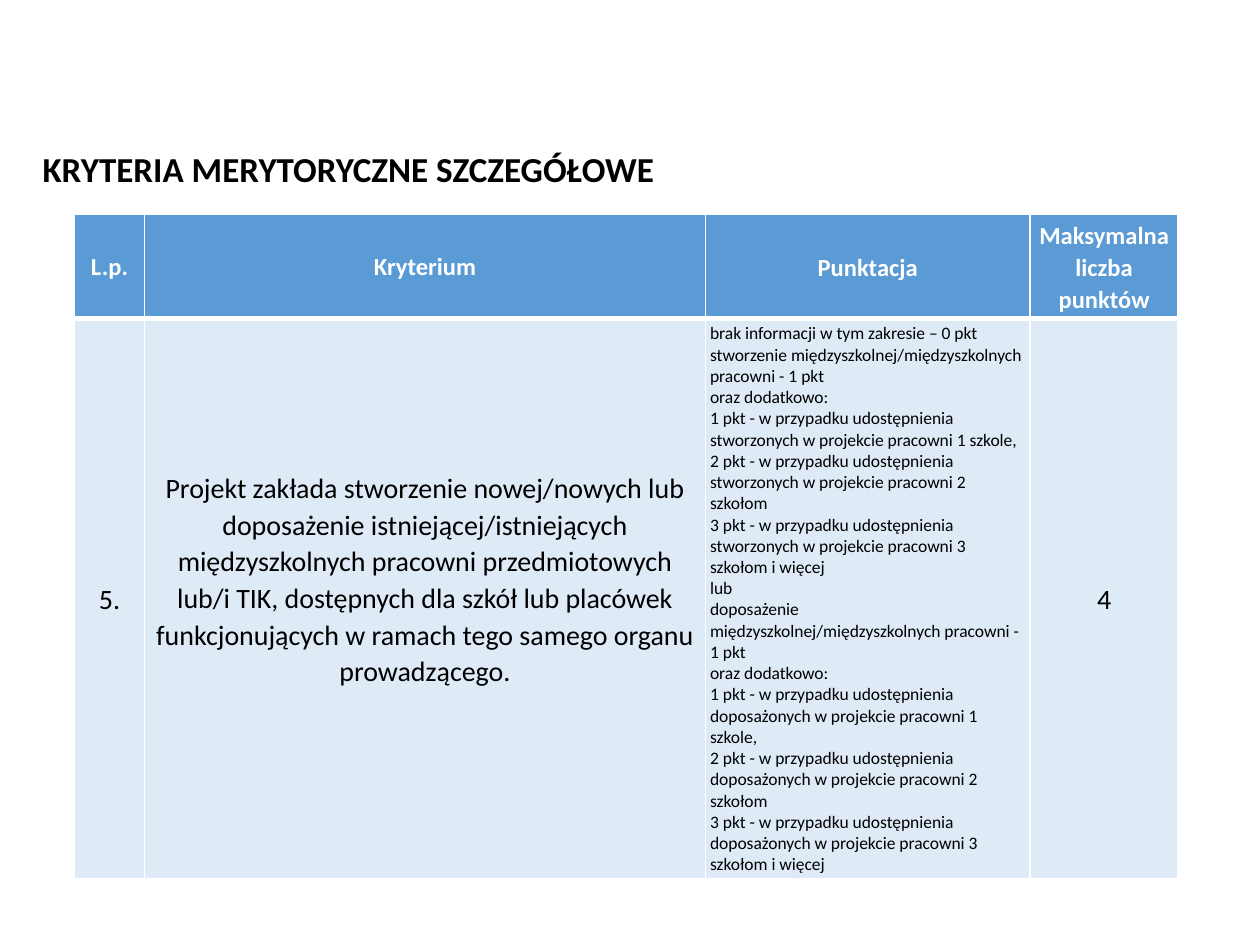
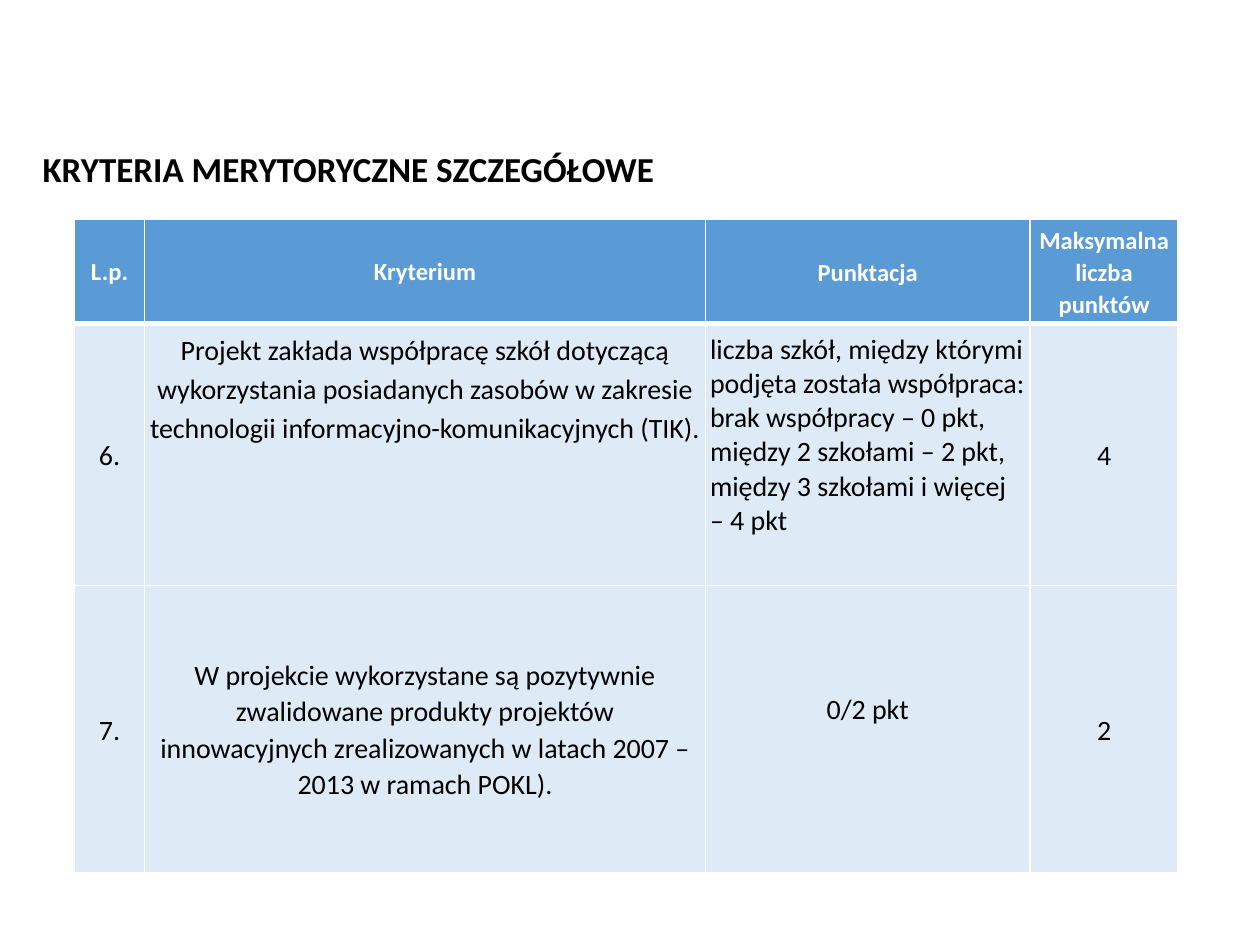
from lxml import etree
from pptx import Presentation
from pptx.dml.color import RGBColor
from pptx.enum.text import MSO_ANCHOR, MSO_AUTO_SIZE, PP_ALIGN
from pptx.oxml.ns import qn
from pptx.util import Pt

CENTER, LEFT = PP_ALIGN.CENTER, PP_ALIGN.LEFT
MIDDLE, TOP = MSO_ANCHOR.MIDDLE, MSO_ANCHOR.TOP
GROW = MSO_AUTO_SIZE.SHAPE_TO_FIT_TEXT

FONT = "Calibri"
BLACK, WHITE = "000000", "FFFFFF"
HEADER_BLUE, BODY_BLUE = "5B9BD5", "DEEBF7"

TITLE = "KRYTERIA MERYTORYCZNE SZCZEGÓŁOWE"
TABLE_LEFT = 42.5
COLUMN_WIDTHS = [40.2, 320.4, 185.6, 84.6]
HEADER_HEIGHT = 59.5
NARROW_INSET, WIDE_INSET = 2.7, 7.2
LINE_GAP = 22
THIN, THICK = 1, 3

HEADERS = [
    ("L.p.", {"spacing": 1}),
    ("Kryterium", {"spacing": 1}),
    ("Punktacja", {}),
    ("Maksymalna liczba punktów", {}),
]

SHARED_LABORATORY_POINTS = """brak informacji w tym zakresie – 0 pkt
stworzenie międzyszkolnej/międzyszkolnych pracowni - 1 pkt
oraz dodatkowo:
1 pkt - w przypadku udostępnienia stworzonych w projekcie pracowni 1 szkole,
2 pkt - w przypadku udostępnienia stworzonych w projekcie pracowni 2 szkołom
3 pkt - w przypadku udostępnienia stworzonych w projekcie pracowni 3 szkołom i więcej
lub
doposażenie międzyszkolnej/międzyszkolnych pracowni - 1 pkt
oraz dodatkowo:
1 pkt - w przypadku udostępnienia doposażonych w projekcie pracowni 1 szkole,
2 pkt - w przypadku udostępnienia doposażonych w projekcie pracowni 2 szkołom
3 pkt - w przypadku udostępnienia doposażonych w projekcie pracowni 3 szkołom i więcej"""

COOPERATION_POINTS = """liczba szkół, między którymi podjęta została współpraca:
brak współpracy – 0 pkt,
między 2 szkołami – 2 pkt,
między 3 szkołami i więcej – 4 pkt"""

LABORATORY_ROWS = [
    (320, [
        ("5.", {}),
        ("Projekt zakłada stworzenie nowej/nowych lub doposażenie "
         "istniejącej/istniejących międzyszkolnych pracowni przedmiotowych "
         "lub/i TIK, dostępnych dla szkół lub placówek funkcjonujących "
         "w ramach tego samego organu prowadzącego.", {"gap_below": LINE_GAP}),
        (SHARED_LABORATORY_POINTS, {"size": 10, "align": LEFT, "spacing": 1}),
        ("4", {}),
    ]),
]

COOPERATION_ROWS = [
    (149.5, [
        ("6.", {}),
        ("Projekt zakłada współpracę szkół dotyczącą wykorzystania posiadanych "
         "zasobów w zakresie technologii informacyjno-komunikacyjnych (TIK).",
         {"anchor": TOP, "spacing": 1.15}),
        (COOPERATION_POINTS, {"align": LEFT, "spacing": 1, "gap_below": LINE_GAP}),
        ("4", {}),
    ]),
    (164.5, [
        ("7.", {}),
        ("W projekcie wykorzystane są pozytywnie zwalidowane produkty projektów "
         "innowacyjnych zrealizowanych w latach 2007 – 2013 w ramach POKL).", {}),
        ("0/2 pkt", {"spacing": 1, "gap_below": LINE_GAP}),
        ("2", {}),
    ]),
]


def color(value):
    """Turn a hex string into a colour."""
    return RGBColor.from_string(value)


def write_text(frame, text, size=16, bold=False, ink=BLACK, align=CENTER, spacing=1.07):
    """Write each line of the text as one formatted paragraph."""
    frame.word_wrap = True
    for index, line in enumerate(text.split("\n")):
        paragraph = frame.add_paragraph() if index else frame.paragraphs[0]
        paragraph.alignment = align
        paragraph.line_spacing = spacing
        run = paragraph.add_run()
        run.text = line
        run.font.name = FONT
        run.font.size = Pt(size)
        run.font.bold = bold
        run.font.color.rgb = color(ink)


def add_borders(cell, top, bottom):
    """Draw white cell borders with the given top and bottom widths."""
    properties = cell._tc.get_or_add_tcPr()
    for side, width in zip("LRTB", (THIN, THIN, top, bottom)):
        line = etree.SubElement(properties, qn(f"a:ln{side}"), w=str(Pt(width)))
        fill = etree.SubElement(line, qn("a:solidFill"))
        etree.SubElement(fill, qn("a:srgbClr"), val=WHITE)


class CriteriaDeck:
    """Hold the shared style and the current slide."""

    def __init__(self):
        """Start a 10 by 7.5 inch presentation."""
        self.presentation = Presentation()
        self.presentation.slide_width = Pt(720)
        self.presentation.slide_height = Pt(540)
        self.slide = None

    def add_slide(self):
        """Open a blank slide with the shared title."""
        layout = self.presentation.slide_layouts[6]
        self.slide = self.presentation.slides.add_slide(layout)
        self.add_title(TITLE)

    def add_title(self, text):
        """Place the slide title."""
        shape = self.slide.shapes.add_textbox(Pt(17.3), Pt(80.6), Pt(656), Pt(31.7))
        frame = shape.text_frame
        frame.vertical_anchor = MIDDLE
        write_text(frame, text, size=20, bold=True, align=LEFT, spacing=1)
        frame.auto_size = GROW

    def add_cell(self, cell, text, fill, top, bottom, inset,
                 anchor=MIDDLE, gap_below=0, **text_format):
        """Fill one table cell with text and style."""
        add_borders(cell, top, bottom)
        cell.fill.solid()
        cell.fill.fore_color.rgb = color(fill)
        cell.vertical_anchor = anchor
        cell.margin_left = cell.margin_right = Pt(inset)
        cell.margin_top = Pt(NARROW_INSET)
        cell.margin_bottom = Pt(NARROW_INSET + gap_below)
        write_text(cell.text_frame, text, **text_format)

    def add_criteria_table(self, top, body_rows):
        """Place the header row and the criteria rows."""
        rows = [(HEADER_HEIGHT, HEADERS)] + body_rows
        height = sum(row_height for row_height, _ in rows)
        table = self.slide.shapes.add_table(
            len(rows), len(COLUMN_WIDTHS), Pt(TABLE_LEFT), Pt(top),
            Pt(sum(COLUMN_WIDTHS)), Pt(height)).table
        table.horz_banding = False
        for column, width in zip(table.columns, COLUMN_WIDTHS):
            column.width = Pt(width)
        for row_index, (row_height, cells) in enumerate(rows):
            table.rows[row_index].height = Pt(row_height)
            is_header = row_index == 0
            style = {
                "fill": HEADER_BLUE if is_header else BODY_BLUE,
                "top": THICK if row_index == 1 else THIN,
                "bottom": THICK if is_header else THIN,
            }
            if is_header:
                style.update(size=14, bold=True, ink=WHITE)
            for column_index, (text, options) in enumerate(cells):
                inset = NARROW_INSET if column_index else WIDE_INSET
                self.add_cell(table.cell(row_index, column_index), text,
                              inset=inset, **{**style, **options})


def main():
    """Build and save both slides."""
    deck = CriteriaDeck()
    for top, body_rows in ((122.6, LABORATORY_ROWS), (125.5, COOPERATION_ROWS)):
        deck.add_slide()
        deck.add_criteria_table(top, body_rows)
    deck.presentation.save("out.pptx")


if __name__ == "__main__":
    main()
